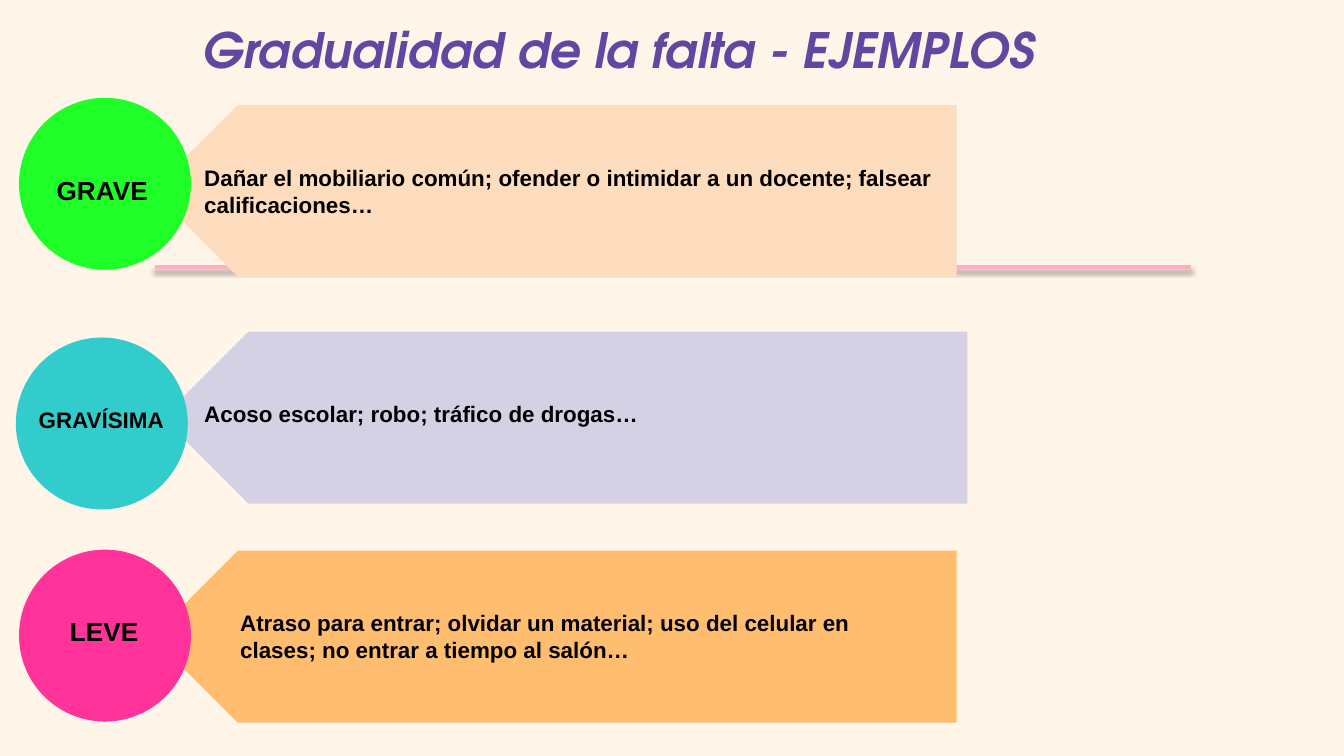
from lxml.etree import SubElement
from pptx import Presentation
from pptx.dml.color import RGBColor
from pptx.enum.shapes import MSO_CONNECTOR, MSO_SHAPE
from pptx.enum.text import MSO_ANCHOR, PP_ALIGN
from pptx.oxml.ns import qn
from pptx.util import Cm, Pt

prs = Presentation()
prs.slide_width, prs.slide_height = Cm(25.4), Cm(14.29)
slide = prs.slides.add_slide(prs.slide_layouts[6])


def paint(fill, color):
    fill.solid()
    fill.fore_color.rgb = RGBColor.from_string(color)


def add_text(text, left, top, width, height, size=12, font="Arial", color="000000",
             italic=False, align=PP_ALIGN.LEFT, anchor=MSO_ANCHOR.TOP, inset=(0.18, 0.18)):
    """Add a bold text box; lengths in cm, inset is (sides, top and bottom)."""
    frame = slide.shapes.add_textbox(Cm(left), Cm(top), Cm(width), Cm(height)).text_frame
    frame.word_wrap = True
    frame.vertical_anchor = anchor
    frame.margin_left = frame.margin_right = Cm(inset[0])
    frame.margin_top = frame.margin_bottom = Cm(inset[1])
    paragraph = frame.paragraphs[0]
    paragraph.alignment = align
    run = paragraph.add_run()
    run.text = text
    run.font.size, run.font.name = Pt(size), font
    run.font.bold, run.font.italic = True, italic
    run.font.color.rgb = RGBColor.from_string(color)


paint(slide.background.fill, "FFF5E9")

# Pink rule with a soft shadow below it
rule = slide.shapes.add_connector(MSO_CONNECTOR.STRAIGHT, Cm(2.92), Cm(5.05), Cm(22.5), Cm(5.05))
rule.line.width = Pt(2)
paint(rule.line.fill, "FEB0C2")
effects = SubElement(rule._element.spPr, qn("a:effectLst"))
shadow = SubElement(effects, qn("a:outerShdw"), blurRad=str(Pt(3.1)), dist=str(Pt(1.6)),
                    dir="5400000", rotWithShape="0")
shadow_color = SubElement(shadow, qn("a:srgbClr"), val="000000")
SubElement(shadow_color, qn("a:alpha"), val="38000")

add_text("Gradualidad de la falta - EJEMPLOS", 3.58, 0.13, 16.92, 1.7, size=26.1,
         font="TeX Gyre Adventor", color="5F47A2", italic=True, inset=(0.25, 0.25))

# Each level: arrow, circle, label and examples; places in cm
levels = [
    dict(arrow=(2.87, 1.98, "FEDDBF"), circle=(0.36, 1.85, "1FFF27"),
         label=("GRAVE", 0.97, 3.2, 2.13, 0.79), label_format=dict(size=14),
         examples=("Dañar el mobiliario común; ofender o intimidar a un docente; "
                   "falsear calificaciones…", 3.68, 2.9, 14.43, 1.42),
         examples_format=dict(anchor=MSO_ANCHOR.MIDDLE)),
    dict(arrow=(3.07, 6.27, "D4D1E4"), circle=(0.3, 6.38, "33CCCC"),
         label=("GRAVÍSIMA", 0.43, 7.57, 2.97, 0.71), label_format=dict(align=PP_ALIGN.CENTER),
         examples=("Acoso escolar; robo; tráfico de drogas…", 3.68, 7.37, 14.43, 0.89),
         examples_format=dict(anchor=MSO_ANCHOR.MIDDLE)),
    dict(arrow=(2.87, 10.41, "FFBE6F"), circle=(0.36, 10.39, "FF3399"),
         label=("LEVE", 0.84, 11.53, 2.26, 0.79),
         label_format=dict(size=14, align=PP_ALIGN.CENTER),
         examples=("Atraso para entrar; olvidar un material; uso del celular en clases; "
                   "no entrar a tiempo al salón…", 4.29, 11.38, 13.21, 1.8),
         examples_format=dict(inset=(0.25, 0.13))),
]
for level in levels:
    for part, preset, width, turn in (("arrow", MSO_SHAPE.PENTAGON, 15.21, 180),
                                      ("circle", MSO_SHAPE.OVAL, 3.25, 0)):
        left, top, color = level[part]
        outline = slide.shapes.add_shape(preset, Cm(left), Cm(top), Cm(width), Cm(3.25))
        outline.rotation = turn
        outline.shadow.inherit = False
        outline.line.fill.background()
        paint(outline.fill, color)
    add_text(*level["examples"], **level["examples_format"])
    add_text(*level["label"], inset=(0.1, 0.1), **level["label_format"])

prs.save("out.pptx")
